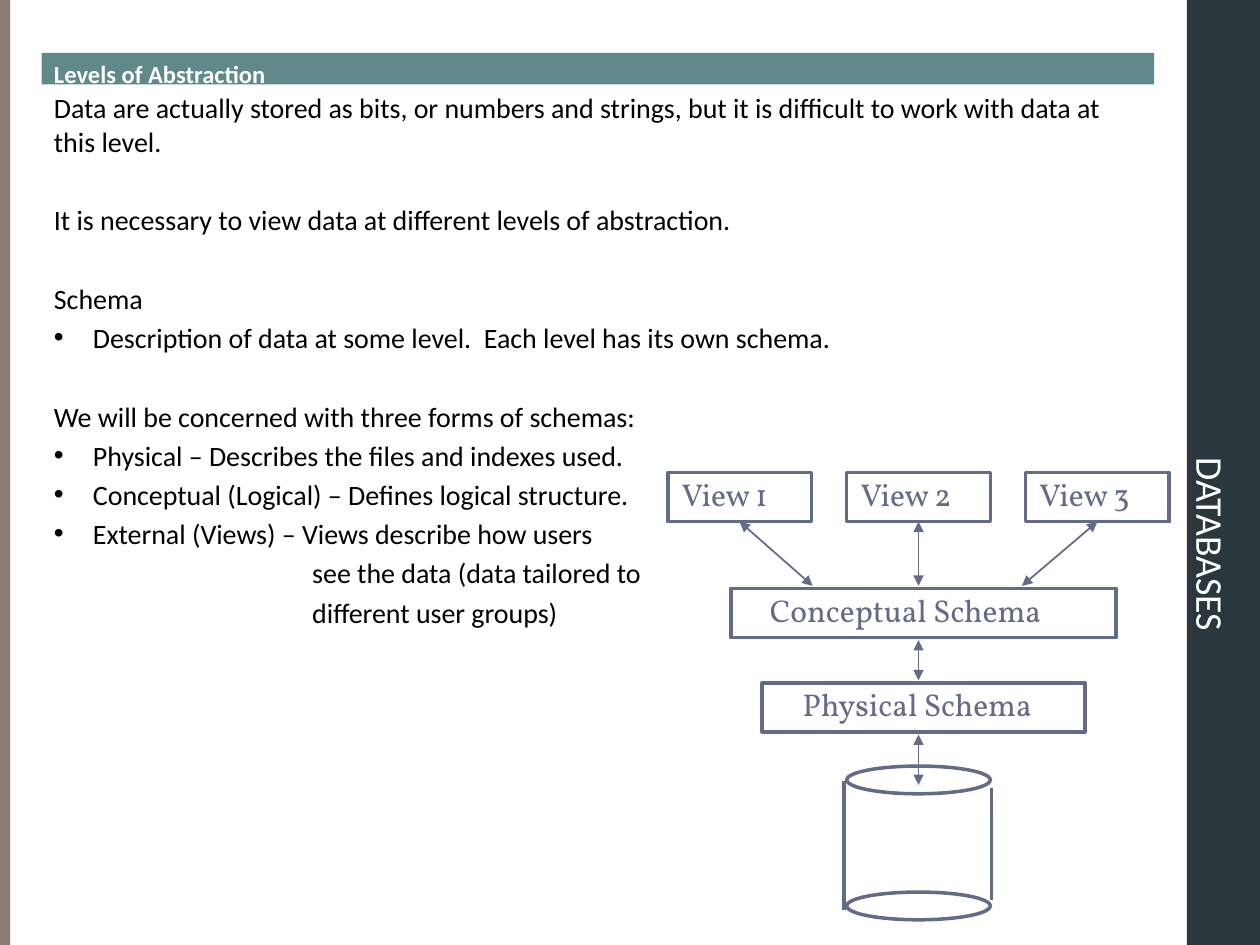
from lxml.etree import SubElement
from pptx import Presentation
from pptx.dml.color import RGBColor
from pptx.enum.shapes import MSO_CONNECTOR, MSO_SHAPE
from pptx.enum.text import MSO_ANCHOR, MSO_AUTO_SIZE, PP_ALIGN
from pptx.oxml.ns import qn
from pptx.util import Inches, Pt

THEME = {
    "side": "2A373D", "edge": "8C7B70", "bar": "61898A",
    "ink": "646B86", "text": "000000", "light": "FFFFFF",
    "sans": "Calibri", "serif": "Vollkorn",
    "title": 21.6, "heading": 14, "body": 16, "label": 18,
    "outline": 2, "arrow": 1, "space": 3.2, "section": 25.7,
}


def add_box(kind, place, fill=None, line=None):
    box = page.shapes.add_shape(kind, *[Inches(value) for value in place])
    box.shadow.inherit = False
    if fill:
        box.fill.solid()
        box.fill.fore_color.rgb = RGBColor.from_string(THEME[fill])
    else:
        box.fill.background()
    if line:
        box.line.color.rgb = RGBColor.from_string(THEME[line])
        box.line.width = Pt(THEME["outline"])
    else:
        box.line.fill.background()
    return box


def write(para, text, font, size, color, bold=False):
    para.alignment = PP_ALIGN.LEFT
    span = para.add_run()
    span.text = text
    values = {"name": THEME[font], "size": Pt(THEME[size]), "bold": bold}
    for name, value in values.items():
        setattr(span.font, name, value)
    span.font.color.rgb = RGBColor.from_string(THEME[color])


deck = Presentation()
deck.slide_width, deck.slide_height = Inches(10), Inches(7.5)
page = deck.slides.add_slide(deck.slide_layouts[5])

# Side bands
add_box(MSO_SHAPE.RECTANGLE, (9.42, 0, 0.58, 7.5), "side")
add_box(MSO_SHAPE.RECTANGLE, (0, 0, 0.08, 7.5), "edge")

# Title, turned a quarter and brought in front of the dark band
title = page.shapes.title
page.shapes._spTree.append(title._element)
place = {"left": 6.5, "top": 3.34, "width": 6.42, "height": 0.58}
for name, value in place.items():
    setattr(title, name, Inches(value))
title.rotation = 90
frame = title.text_frame
values = {"word_wrap": True, "auto_size": MSO_AUTO_SIZE.NONE,
          "vertical_anchor": MSO_ANCHOR.MIDDLE,
          "margin_left": Inches(3.21), "margin_right": 0,
          "margin_top": Inches(0.19), "margin_bottom": 0}
for name, value in values.items():
    setattr(frame, name, value)
write(frame.paragraphs[0], "DATABASES", "sans", "title", "light")

# Heading bar
bar = add_box(MSO_SHAPE.RECTANGLE, (0.33, 0.42, 8.83, 0.25), "bar")
bar.text_frame.word_wrap = True
bar.text_frame.vertical_anchor = MSO_ANCHOR.TOP
write(bar.text_frame.paragraphs[0], "Levels of Abstraction",
      "sans", "heading", "light", True)

# Body text: style, text
body_lines = [
    ("plain", "Data are actually stored as bits, or numbers and strings, "
              "but it is difficult to work with data at this level."),
    ("section", "It is necessary to view data at different levels of abstraction."),
    ("section", "Schema"),
    ("bullet", "Description of data at some level.  Each level has its own schema."),
    ("section", "We will be concerned with three forms of schemas:"),
    ("bullet", "Physical – Describes the files and indexes used."),
    ("bullet", "Conceptual (Logical) – Defines logical structure."),
    ("bullet", "External (Views) – Views describe how users"),
    ("continued", "see the data (data tailored to"),
    ("continued", "different user groups)"),
]
margins = {"bullet": (0.31, -0.31), "continued": (2.05, 0)}
body = page.shapes.add_textbox(Inches(0.33), Inches(0.67), Inches(8.83), Inches(4.5))
frame = body.text_frame
frame.word_wrap = True
for index, (style, text) in enumerate(body_lines):
    para = frame.add_paragraph() if index else frame.paragraphs[0]
    write(para, text, "sans", "body", "text")
    para.space_before = Pt(THEME["section" if style == "section" else "space"])
    margin, indent = margins.get(style, (0, 0))
    props = para._p.get_or_add_pPr()
    props.set("marL", str(Inches(margin)))
    props.set("indent", str(Inches(indent)))
    if style == "bullet":
        SubElement(props, qn("a:buFont"), typeface="Arial")
        SubElement(props, qn("a:buChar"), char="•")

# Schema boxes: label, left, top, width, text inset
schema_boxes = [(f"View {number + 1}", 5.3 + 1.42 * number, 3.75, 1.14, 0.11)
                for number in range(3)]
schema_boxes += [("Conceptual Schema", 5.8, 4.67, 3.06, 0.31),
                 ("Physical Schema", 6.05, 5.42, 2.56, 0.32)]
boxes = []
for label, left, top, width, inset in schema_boxes:
    box = add_box(MSO_SHAPE.RECTANGLE, (left, top, width, 0.39), line="ink")
    frame = box.text_frame
    values = {"word_wrap": False, "vertical_anchor": MSO_ANCHOR.TOP,
              "margin_left": Inches(inset), "margin_right": 0,
              "margin_top": Inches(0.02), "margin_bottom": 0}
    for name, value in values.items():
        setattr(frame, name, value)
    write(frame.paragraphs[0], label, "serif", "label", "ink")
    boxes.append(box)

# Database cylinder ends
for top in (6.08, 7.08):
    add_box(MSO_SHAPE.OVAL, (6.72, top, 1.14, 0.22), line="ink")

# Cylinder sides and arrows: ends, weight, box at the start
lines = [
    ((6.7, 6.2, 6.7, 7.22), "outline", None),
    ((7.87, 6.25, 7.87, 7.14), "outline", None),
    ((5.88, 4.16, 6.45, 4.65), "arrow", boxes[0]),
    ((7.29, 4.16, 7.29, 4.65), "arrow", boxes[1]),
    ((8.71, 4.16, 8.11, 4.65), "arrow", boxes[2]),
    ((7.29, 5.08, 7.29, 5.4), "arrow", None),
    ((7.29, 5.83, 7.29, 6.23), "arrow", None),
]
for ends, weight, start in lines:
    line = page.shapes.add_connector(
        MSO_CONNECTOR.STRAIGHT, *[Inches(value) for value in ends])
    line.line.color.rgb = RGBColor.from_string(THEME["ink"])
    line.line.width = Pt(THEME[weight])
    if start:
        line.begin_connect(start, 2)
    if weight == "arrow":
        for end in ("a:headEnd", "a:tailEnd"):
            SubElement(line.line._get_or_add_ln(), qn(end), type="triangle")
    SubElement(line._element.spPr, qn("a:effectLst"))

deck.save("out.pptx")
